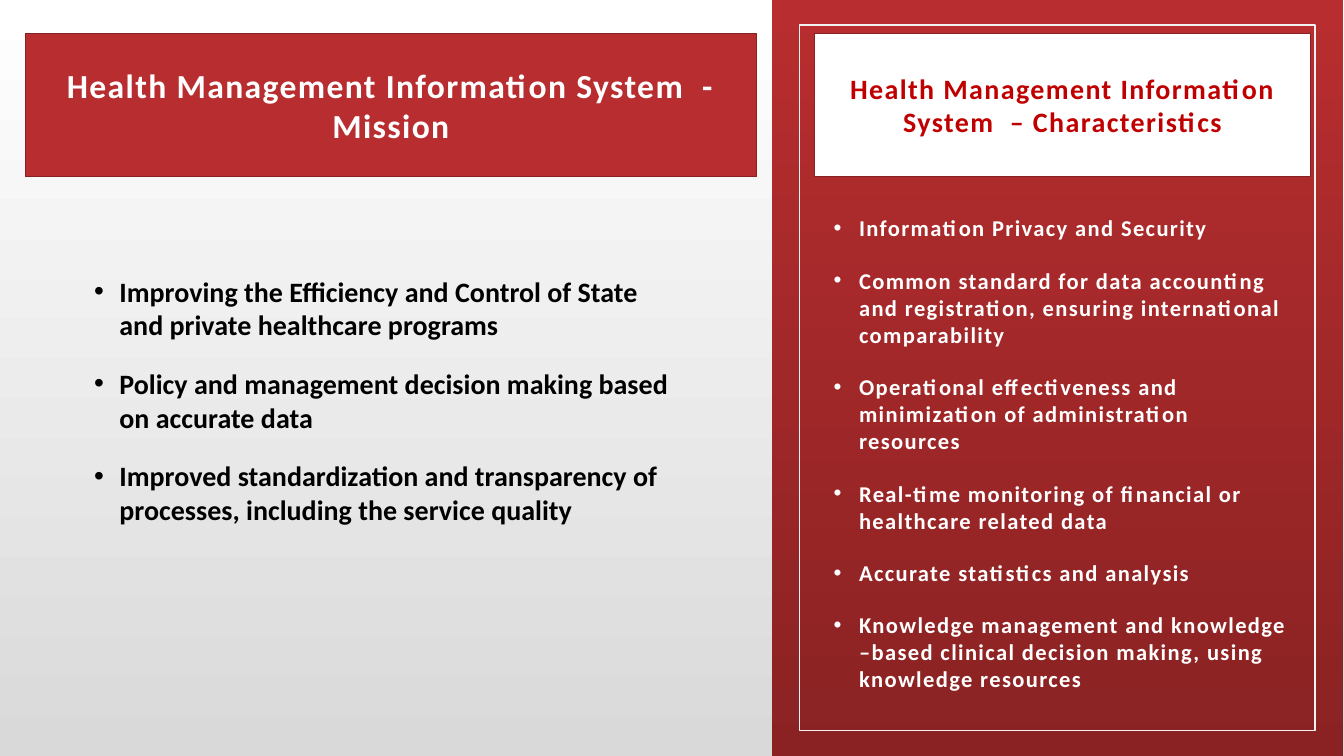
from lxml import etree
from pptx import Presentation
from pptx.dml.color import RGBColor
from pptx.enum.shapes import MSO_SHAPE
from pptx.enum.text import MSO_ANCHOR, MSO_AUTO_SIZE, PP_ALIGN
from pptx.oxml.ns import qn
from pptx.util import Cm, Pt

RECTANGLE = MSO_SHAPE.RECTANGLE
MIDDLE, TOP = MSO_ANCHOR.MIDDLE, MSO_ANCHOR.TOP
CENTER, LEFT = PP_ALIGN.CENTER, PP_ALIGN.LEFT
NO_AUTOFIT = MSO_AUTO_SIZE.NONE
TITLE_ONLY = 5
FONT = "Calibri"
BULLET_INDENT = Cm(0.64)
COLORS = {
    "white": "FFFFFF",
    "black": "000000",
    "grey": "D9D9D9",
    "frame": "F2F2F2",
    "red": "B82D2F",
    "dark red": "8A2223",
    "outline": "882123",
    "heading red": "C00000",
}
MISSION = [
    "Improving the Efficiency and Control of State and private healthcare programs",
    "Policy and management decision making based on accurate data",
    "Improved standardization and transparency of processes, including the service quality",
]
CHARACTERISTICS = [
    "Information Privacy and Security",
    "Common standard for data accounting and registration, ensuring international comparability",
    "Operational effectiveness and minimization of administration resources",
    "Real-time monitoring of financial or healthcare related data",
    "Accurate statistics and analysis",
    "Knowledge management and knowledge –based clinical decision making, using knowledge resources",
]


def color(name):
    return RGBColor.from_string(COLORS[name])


def fill_downwards(fill, top, bottom):
    """Fill with a gradient that runs from the top colour to the bottom one."""
    fill.gradient()
    fill.gradient_angle = 270
    for stop, name in zip(fill.gradient_stops, (top, bottom)):
        stop.color.rgb = color(name)


def add_bullet(paragraph):
    properties = paragraph._p.get_or_add_pPr()
    properties.set("marL", str(BULLET_INDENT))
    properties.set("indent", str(-BULLET_INDENT))
    etree.SubElement(properties, qn("a:buFont"), typeface="Arial")
    etree.SubElement(properties, qn("a:buChar"), char="•")


def write(shape, *texts, size, ink, spacing=0, align=LEFT, anchor=TOP, bullets=False):
    """Write one bold paragraph per text; spacing is between letters, in points."""
    frame = shape.text_frame
    frame.word_wrap = True
    frame.auto_size = NO_AUTOFIT
    frame.vertical_anchor = anchor
    for index, text in enumerate(texts):
        paragraph = frame.add_paragraph() if index else frame.paragraphs[0]
        paragraph.alignment = align
        paragraph.line_spacing = 1.0
        paragraph.space_before = Pt(18)
        if bullets:
            add_bullet(paragraph)
        run = paragraph.add_run()
        run.text = text
        run.font.name = FONT
        run.font.size = Pt(size)
        run.font.bold = True
        run.font.color.rgb = color(ink)
        run._r.get_or_add_rPr().set("spc", str(spacing * 100))


def add_rectangle(slide, left, top, width, height):
    shape = slide.shapes.add_shape(RECTANGLE, left, top, width, height)
    shape.shadow.inherit = False
    return shape


def format_heading(shape, text, paper, ink, size):
    shape.fill.solid()
    shape.fill.fore_color.rgb = color(paper)
    shape.line.color.rgb = color("outline")
    shape.line.width = Pt(1)
    write(shape, text, size=size, ink=ink, spacing=1, align=CENTER, anchor=MIDDLE)


def add_mission(slide, left, top, width):
    title = slide.shapes.title
    title.left, title.top, title.width, title.height = left, top, width, Cm(3.61)
    format_heading(title, "Health Management Information System  - Mission", "red", "white", 24)
    body = slide.shapes.add_textbox(left + Cm(1.48), top + Cm(5.94), width - Cm(3.38), Cm(10.46))
    write(body, *MISSION, size=20, ink="black", bullets=True)


def add_characteristics(slide, left, top, width, height):
    panel = add_rectangle(slide, left, top, width, height)
    fill_downwards(panel.fill, "red", "dark red")
    panel.line.fill.background()

    margin = Cm(0.64)
    frame = add_rectangle(slide, left + Cm(0.69), top + margin, Cm(13), height - 2 * margin)
    frame.fill.background()
    frame.line.color.rgb = color("frame")
    frame.line.width = Pt(1.25)

    heading = add_rectangle(slide, left + Cm(1.07), top + Cm(0.84), Cm(12.5), Cm(3.61))
    format_heading(heading, "Health Management Information System  – Characteristics",
                   "white", "heading red", 20)
    body = slide.shapes.add_textbox(left + Cm(1.3), top + Cm(5.28), Cm(12.07), Cm(12.7))
    write(body, *CHARACTERISTICS, size=16.1, ink="white", spacing=1, bullets=True)


def main():
    presentation = Presentation()
    presentation.slide_width, presentation.slide_height = Cm(33.87), Cm(19.05)
    slide = presentation.slides.add_slide(presentation.slide_layouts[TITLE_ONLY])
    fill_downwards(slide.background.fill, "white", "grey")
    add_mission(slide, Cm(0.64), Cm(0.84), Cm(18.42))
    add_characteristics(slide, Cm(19.46), Cm(0), Cm(14.39), presentation.slide_height)
    presentation.save("out.pptx")


if __name__ == "__main__":
    main()
